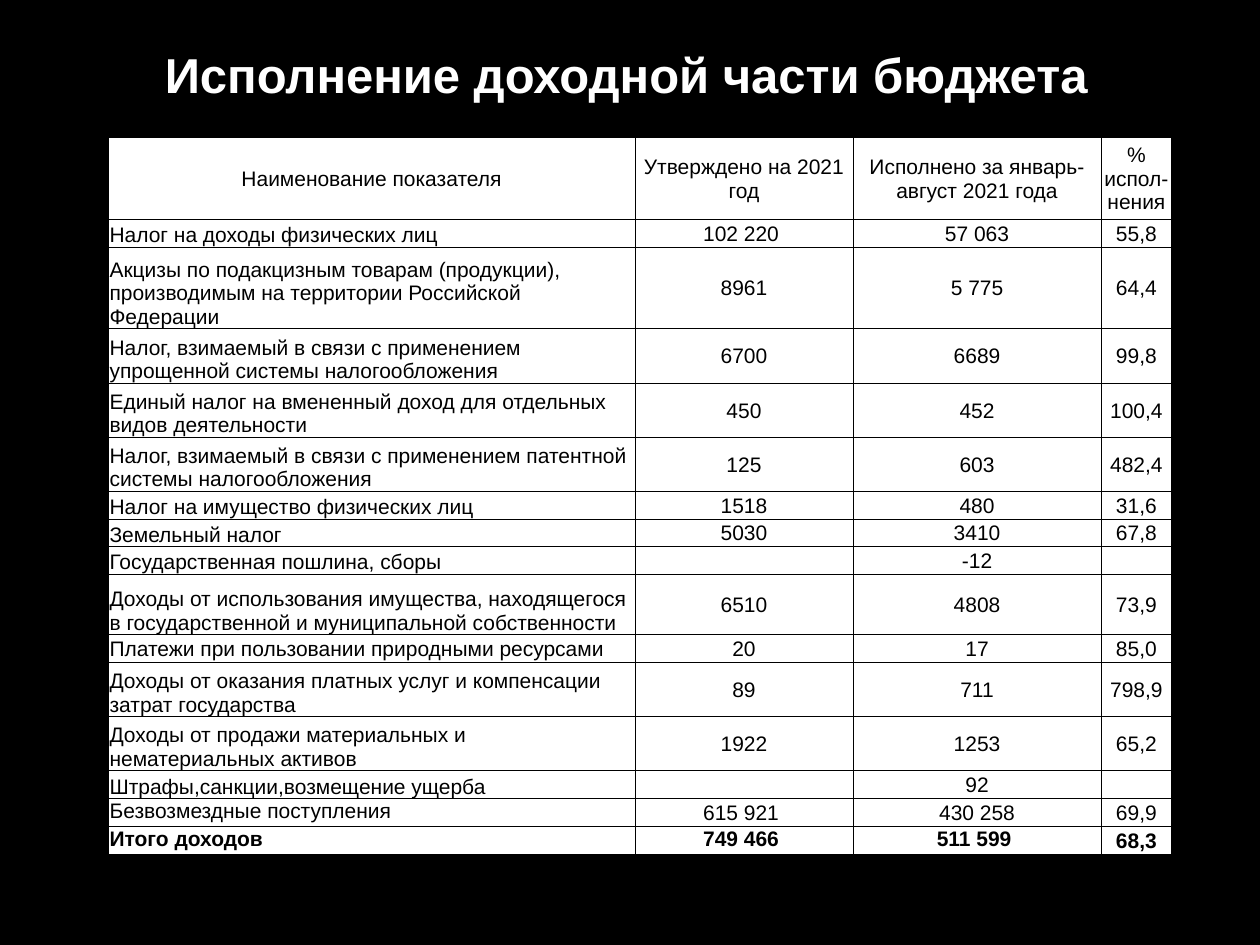
from typing import NamedTuple

from lxml import etree
from pptx import Presentation
from pptx.dml.color import RGBColor
from pptx.enum.text import MSO_ANCHOR, PP_ALIGN
from pptx.oxml.ns import qn
from pptx.util import Inches, Pt

TOP, MIDDLE, BOTTOM = MSO_ANCHOR.TOP, MSO_ANCHOR.MIDDLE, MSO_ANCHOR.BOTTOM
LEFT, CENTER, JUSTIFY = PP_ALIGN.LEFT, PP_ALIGN.CENTER, PP_ALIGN.JUSTIFY

COLORS = {"background": "000000", "title": "FFFFFF", "cell": "FFFFFF",
          "text": "000000", "border": "000000"}
FONT = "Arial"
COLUMN_WIDTHS = (4.18, 1.73, 1.97, 0.56)


class BudgetRow(NamedTuple):
    name: str
    approved: str
    executed: str
    percent: str
    height: float = 0.22
    name_anchor: MSO_ANCHOR = BOTTOM
    name_align: PP_ALIGN = LEFT
    total: bool = False

    @property
    def values(self) -> tuple:
        return self.name, self.approved, self.executed, self.percent


ROWS = [
    BudgetRow("Наименование показателя", "Утверждено на 2021 год",
              "Исполнено за январь-август 2021 года", "% испол-нения",
              0.65, MIDDLE, CENTER),
    BudgetRow("Налог на доходы физических лиц", "102 220 ", "57 063", "55,8"),
    BudgetRow("Акцизы по подакцизным товарам (продукции), производимым на "
              "территории Российской Федерации", "8961", "5 775", "64,4", 0.65),
    BudgetRow("Налог, взимаемый в связи с применением упрощенной системы "
              "налогообложения", "6700", "6689", "99,8", 0.43),
    BudgetRow("Единый налог на вмененный доход для отдельных видов "
              "деятельности", "450", "452", "100,4", 0.43),
    BudgetRow("Налог, взимаемый в связи с применением патентной системы "
              "налогообложения", "125", "603", "482,4", 0.43),
    BudgetRow("Налог на имущество физических лиц", "1518", "480", "31,6"),
    BudgetRow("Земельный налог", "5030", "3410", "67,8"),
    BudgetRow("Государственная пошлина, сборы", "", "-12", ""),
    BudgetRow("Доходы от использования имущества, находящегося в "
              "государственной и муниципальной собственности",
              "6510", "4808", "73,9", 0.48),
    BudgetRow("Платежи при пользовании природными ресурсами",
              "20", "17", "85,0", name_anchor=MIDDLE),
    BudgetRow("Доходы от оказания платных услуг и компенсации затрат "
              "государства", "89", "711", "798,9", 0.43),
    BudgetRow("Доходы от продажи материальных и нематериальных активов",
              "1922", "1253", "65,2", 0.43),
    BudgetRow("Штрафы,санкции,возмещение ущерба", "", "92", ""),
    BudgetRow("Безвозмездные поступления", "615 921 ", "430 258", "69,9",
              name_anchor=TOP, name_align=JUSTIFY),
    BudgetRow("Итого доходов", "749 466 ", "511 599 ", "68,3",
              name_anchor=TOP, name_align=JUSTIFY, total=True),
]


def rgb(name: str) -> RGBColor:
    return RGBColor.from_string(COLORS[name])


def write(p, text: str, size: float, color: str, bold: bool, align) -> None:
    p.alignment = align
    if not text:
        # An empty cell keeps the row height of its text size
        p._p.get_or_add_endParaRPr().set("sz", str(int(size * 100)))
        return
    r = p.add_run()
    r.text = text
    r.font.name, r.font.size, r.font.bold = FONT, Pt(size), bold
    r.font.color.rgb = rgb(color)


def add_borders(cell, width: float) -> None:
    tc_pr = cell._tc.get_or_add_tcPr()
    for side in ("a:lnL", "a:lnR", "a:lnT", "a:lnB"):
        line = etree.SubElement(tc_pr, qn(side), w=str(Pt(width)))
        fill = etree.SubElement(line, qn("a:solidFill"))
        etree.SubElement(fill, qn("a:srgbClr"), val=COLORS["border"])


def fill_cell(cell, text: str, anchor, align, bold: bool) -> None:
    add_borders(cell, 0.5)
    cell.fill.solid()
    cell.fill.fore_color.rgb = rgb("cell")
    cell.margin_left = cell.margin_right = cell.margin_top = Inches(0.01)
    cell.margin_bottom = 0
    cell.vertical_anchor = anchor
    write(cell.text_frame.paragraphs[0], text, 12, "text", bold, align)


def add_title(slide, text: str) -> None:
    sp = slide.shapes.title
    sp.left, sp.top = Inches(0.47), Inches(0.23)
    sp.width, sp.height = Inches(9), Inches(0.72)
    tf = sp.text_frame
    tf.vertical_anchor = MIDDLE
    write(tf.paragraphs[0], text, 28, "title", True, CENTER)


def add_budget_table(slide, rows: list) -> None:
    table = slide.shapes.add_table(
        len(rows), len(COLUMN_WIDTHS), Inches(0.86), Inches(1.09),
        Inches(sum(COLUMN_WIDTHS)), Inches(sum(row.height for row in rows))).table
    table.horz_banding = table.first_row = False
    for column, width in zip(table.columns, COLUMN_WIDTHS):
        column.width = Inches(width)
    for i, row in enumerate(rows):
        table.rows[i].height = Inches(row.height)
        value_anchor = TOP if row.total else MIDDLE
        anchors = (row.name_anchor, value_anchor, value_anchor, MIDDLE)
        aligns = (row.name_align, CENTER, CENTER, CENTER)
        for j, (text, anchor, align) in enumerate(zip(row.values, anchors, aligns)):
            fill_cell(table.cell(i, j), text, anchor, align, row.total)


def main() -> None:
    prs = Presentation()
    prs.slide_width, prs.slide_height = Inches(10), Inches(7.5)
    # Title Only layout on a black background
    slide = prs.slides.add_slide(prs.slide_layouts[5])
    slide.background.fill.solid()
    slide.background.fill.fore_color.rgb = rgb("background")

    add_title(slide, "Исполнение доходной части бюджета")
    add_budget_table(slide, ROWS)
    prs.save("out.pptx")


if __name__ == "__main__":
    main()
